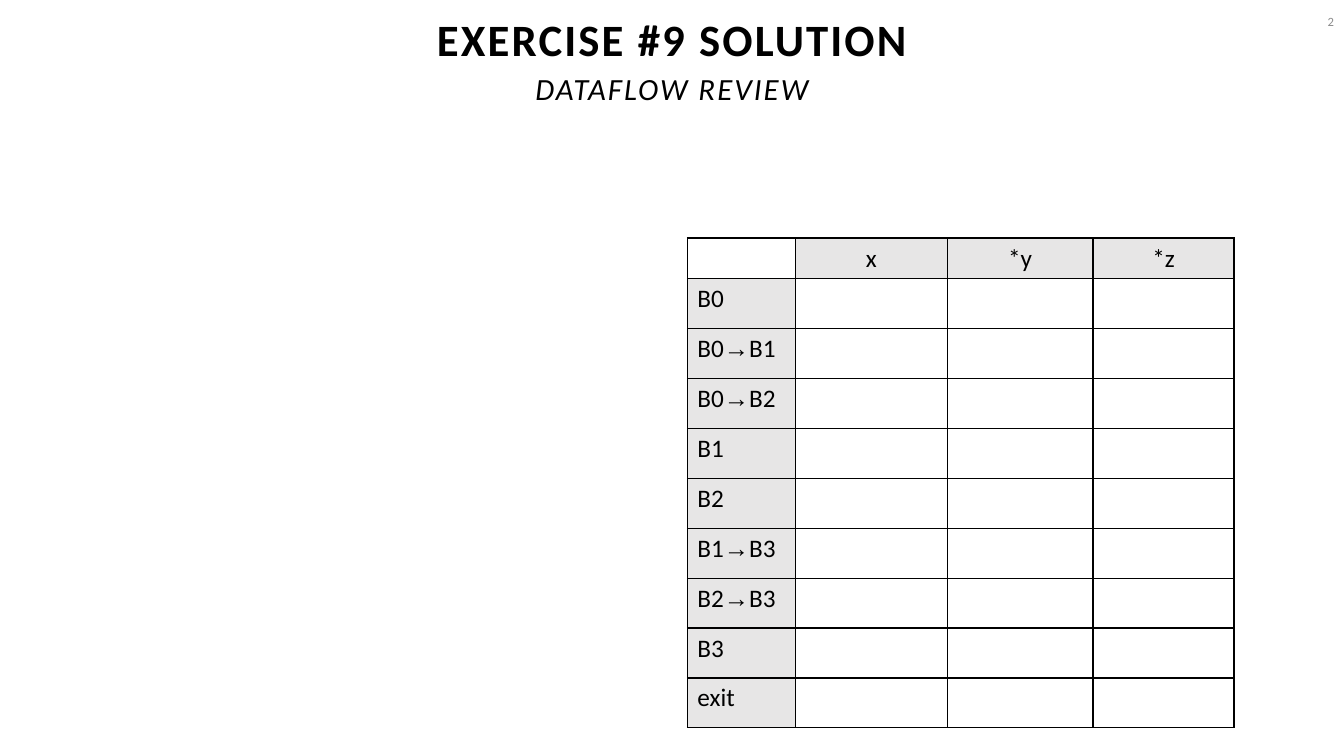
from lxml import etree
from pptx import Presentation
from pptx.dml.color import RGBColor
from pptx.enum import text as t
from pptx.oxml import ns
from pptx.util import Pt

BLACK, GREY, LABEL_FILL = "000000", "8C8C8C", "E7E6E6"


def style(span, size, color=BLACK, font="Calibri", spacing=0):
    span.font.size = Pt(size)
    span.font.name = font
    span.font.color.rgb = RGBColor.from_string(color)
    if spacing:
        span._r.get_or_add_rPr().set("spc", str(spacing))


def add_borders(cell):
    properties = cell._tc.get_or_add_tcPr()
    for side in ("lnL", "lnR", "lnT", "lnB"):
        line = etree.SubElement(properties, ns.qn("a:" + side), w=str(Pt(1)))
        fill = etree.SubElement(line, ns.qn("a:solidFill"))
        etree.SubElement(fill, ns.qn("a:srgbClr"), val=BLACK)


deck = Presentation()
deck.slide_width, deck.slide_height = Pt(960), Pt(540)
page = deck.slides.add_slide(deck.slide_layouts[5])

# Title and subtitle
title = page.shapes.title
title.left, title.top, title.width, title.height = Pt(0), Pt(7.2), Pt(960), Pt(44)
subtitle = page.shapes.add_textbox(Pt(0), Pt(36), Pt(960), Pt(44))
for box, words, size in ((title, "EXERCISE #9 SOLUTION", 32),
                         (subtitle, "DATAFLOW REVIEW", 22)):
    frame = box.text_frame
    frame.text = words
    frame.word_wrap = True
    frame.auto_size = t.MSO_AUTO_SIZE.NONE
    frame.vertical_anchor = t.MSO_ANCHOR.BOTTOM
    para = frame.paragraphs[0]
    para.alignment = t.PP_ALIGN.CENTER
    para.line_spacing = 0.9
    style(para.runs[0], size, spacing=150)
title.text_frame.paragraphs[0].runs[0].font.bold = True
subtitle.text_frame.paragraphs[0].runs[0].font.italic = True

# Page number
number = page.shapes.add_textbox(Pt(909), Pt(1), Pt(51), Pt(29))
number.text_frame.text = "2"
number.text_frame.word_wrap = True
number.text_frame.vertical_anchor = t.MSO_ANCHOR.MIDDLE
para = number.text_frame.paragraphs[0]
para.alignment = t.PP_ALIGN.RIGHT
style(para.runs[0], 9, GREY)

# Dataflow table: variables across, blocks and edges down
variables = ["", "x", "*y", "*z"]
blocks = ["B0", "B0→B1", "B0→B2", "B1", "B2", "B1→B3", "B2→B3", "B3", "exit"]
widths = [77.1, 108.6, 104.1, 100.7]
heights = [29.2] + [35.64] * len(blocks)
table = page.shapes.add_table(len(heights), len(widths), Pt(491), Pt(170),
                              Pt(sum(widths)), Pt(sum(heights))).table
table.first_row = table.horz_banding = False
for column, width in zip(table.columns, widths):
    column.width = Pt(width)
for row, height in zip(table.rows, heights):
    row.height = Pt(height)

for r, block in enumerate([""] + blocks):
    for c, variable in enumerate(variables):
        cell = table.cell(r, c)
        add_borders(cell)
        label = variable if r == 0 else block if c == 0 else ""
        para = cell.text_frame.paragraphs[0]
        para.font.size = Pt(18)
        if not label:
            cell.fill.background()
            continue
        cell.fill.solid()
        cell.fill.fore_color.rgb = RGBColor.from_string(LABEL_FILL)
        if r == 0:
            para.alignment = t.PP_ALIGN.CENTER
        # The arrow of an edge has its own font
        for part in filter(None, label.partition("→")):
            span = para.add_run()
            span.text = part
            style(span, 18, font="Times New Roman" if part == "→" else "Calibri")

deck.save("out.pptx")
